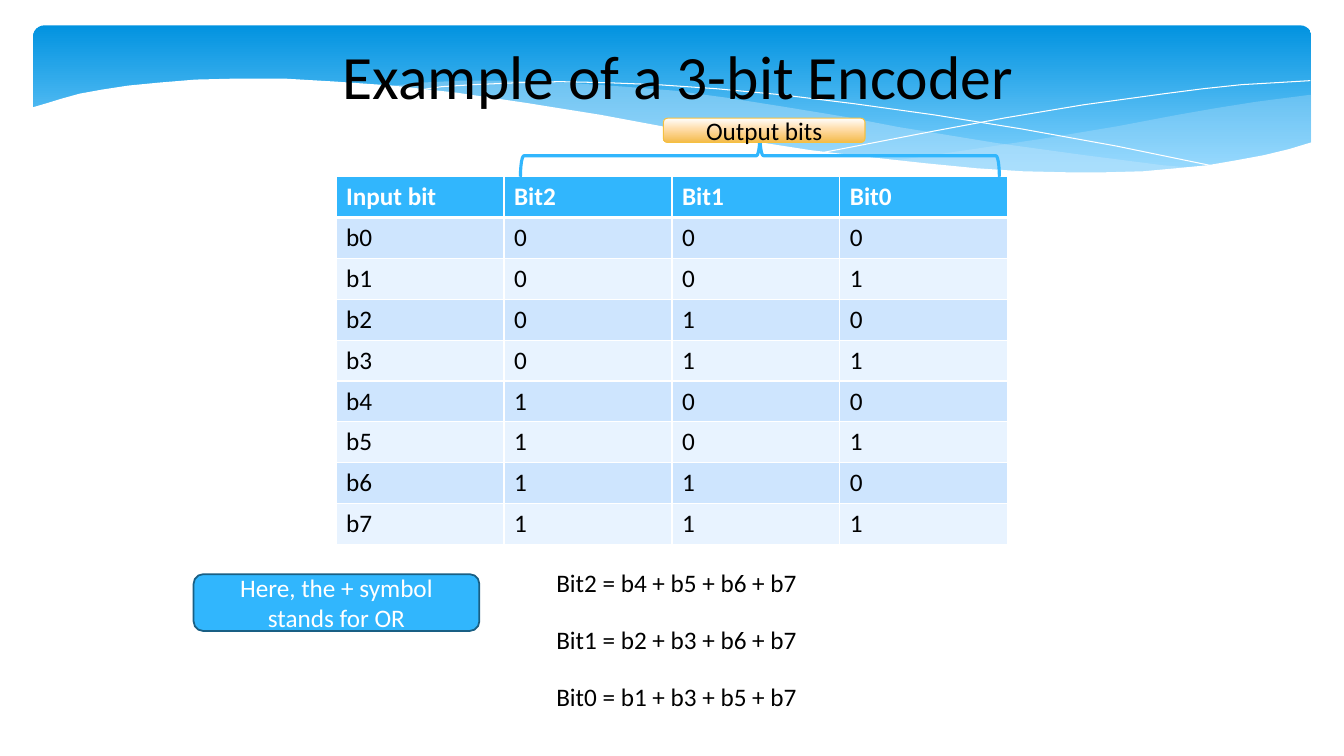
from copy import deepcopy
from lxml import etree
from pptx import Presentation
from pptx.dml.color import RGBColor
from pptx.enum.shapes import MSO_SHAPE
from pptx.enum.text import MSO_ANCHOR, MSO_AUTO_SIZE, PP_ALIGN
from pptx.oxml.ns import qn
from pptx.util import Cm, Pt

ROUNDED, BRACE = MSO_SHAPE.ROUNDED_RECTANGLE, MSO_SHAPE.LEFT_BRACE
LEFT, CENTER = PP_ALIGN.LEFT, PP_ALIGN.CENTER
MIDDLE, GROW = MSO_ANCHOR.MIDDLE, MSO_AUTO_SIZE.SHAPE_TO_FIT_TEXT

WHITE = RGBColor(0xFF, 0xFF, 0xFF)
BLACK = RGBColor(0x00, 0x00, 0x00)
SKY = RGBColor(0x31, 0xB6, 0xFD)
NAVY = RGBColor(0x19, 0x5F, 0x84)
GOLD = RGBColor(0xF5, 0xC0, 0x40)
PALE_WAVE = RGBColor(0xC6, 0xE7, 0xFC)
ROW_COLORS = [RGBColor(0xE8, 0xF3, 0xFF), RGBColor(0xCE, 0xE5, 0xFE)]
BANNER_STOPS = [(0, RGBColor(0x02, 0x93, 0xE0)), (0.9, RGBColor(0x83, 0xD3, 0xFE))]
LABEL_STOPS = [(0, WHITE), (0.44, RGBColor(0xFF, 0xDD, 0xAA)),
               (1, RGBColor(0xF4, 0xBB, 0x4A))]


def set_text(tf, text, size, color, align=LEFT, bold=False):
    tf.text = text
    p = tf.paragraphs[0]
    p.alignment = align
    r = p.runs[0]
    r.font.name = "Calibri"
    r.font.size = Pt(size)
    r.font.bold = bold
    r.font.color.rgb = color


def set_gradient(shape, stops):
    shape.fill.gradient()
    shape.fill.gradient_angle = 270
    gs_list = shape._element.spPr.find(qn("a:gradFill")).find(qn("a:gsLst"))
    while len(gs_list) < len(stops):
        gs_list.append(deepcopy(gs_list[0]))
    for stop, (position, color) in zip(shape.fill.gradient_stops, stops):
        stop.position = position
        stop.color.rgb = color


prs = Presentation()
prs.slide_width, prs.slide_height = Cm(33.87), Cm(19.05)
s = prs.slides.add_slide(prs.slide_layouts[6])

banner = s.shapes.add_shape(ROUNDED, Cm(0.84), Cm(0.64), Cm(32.21), Cm(3.96))
banner.adjustments[0] = 0.07
banner.shadow.inherit = False
banner.line.fill.background()
set_gradient(banner, BANNER_STOPS)

right_wave = [
    (1300, 94), (1246, 101), (1208, 107), (1168, 114), (1110, 125), (1038, 137),
    (972, 147), (911, 156), (882, 160), (940, 165), (993, 169), (1041, 172),
    (1099, 172), (1151, 170), (1196, 165), (1238, 158), (1266, 152), (1301, 142),
    (1301, 94)]
middle_wave = [
    (1190, 167), (1154, 164), (1076, 154), (989, 142), (891, 126), (839, 116),
    (778, 106), (721, 97), (669, 90), (619, 86), (560, 82), (506, 80), (459, 80),
    (418, 82), (382, 86), (431, 90), (483, 97), (539, 106), (599, 116), (706, 135),
    (779, 146), (846, 156), (907, 163), (963, 168), (1014, 171), (1061, 173),
    (1104, 173), (1143, 171), (1190, 167)]
long_curve = [
    (412, 90), (438, 86), (470, 84), (516, 82), (555, 81), (600, 82), (652, 84),
    (710, 88), (775, 94), (848, 103), (927, 114), (1014, 128), (1108, 145),
    (1210, 166)]
short_curve = [
    (818, 151), (870, 141), (927, 130), (997, 117), (1075, 104), (1155, 93),
    (1194, 88), (1232, 84), (1267, 82), (1300, 80)]
white_wave = [
    (1302, 141), (1279, 148), (1254, 154), (1227, 159), (1198, 164), (1167, 167),
    (1134, 170), (1097, 171), (1058, 171), (1015, 170), (969, 167), (918, 162),
    (863, 156), (804, 149), (740, 139), (671, 128), (596, 114), (521, 102),
    (453, 92), (390, 85), (333, 81), (282, 78), (235, 78), (194, 79), (158, 82),
    (127, 85), (101, 89), (79, 93), (61, 98), (48, 102), (31, 107), (31, 224),
    (1303, 224), (1303, 140)]
waves = [(right_wave, PALE_WAVE, 29), (middle_wave, PALE_WAVE, 40),
         (long_curve, None, 0), (short_curve, None, 0), (white_wave, WHITE, 100)]
for points, color, opacity in waves:
    builder = s.shapes.build_freeform(*points[0], scale=Cm(0.0254))
    builder.add_line_segments(points[1:], close=color is not None)
    wave = builder.convert_to_shape()
    wave.shadow.inherit = False
    if color is None:
        wave.fill.background()
        wave.line.color.rgb = WHITE
        wave.line.width = Pt(0)
    else:
        wave.fill.solid()
        wave.fill.fore_color.rgb = color
        wave.line.fill.background()
        rgb = wave._element.spPr.find(qn("a:solidFill"))[0]
        etree.SubElement(rgb, qn("a:alpha"), val=str(opacity * 1000))

title = s.shapes.add_textbox(Cm(4.34), Cm(0.84), Cm(25.5), Cm(2.14))
title.text_frame.word_wrap = True
title.text_frame.auto_size = GROW
set_text(title.text_frame, "Example of a 3-bit Encoder", 44, BLACK, CENTER)

rows = [["Input bit", "Bit2", "Bit1", "Bit0"]]
rows += [[f"b{n}", *f"{n:03b}"] for n in range(8)]
table = s.shapes.add_table(9, 4, Cm(8.47), Cm(4.45), Cm(16.93), Cm(9.27)).table
for i, row in enumerate(rows):
    header = i == 0
    for j, value in enumerate(row):
        cell = table.cell(i, j)
        set_text(cell.text_frame, value, 18, WHITE if header else BLACK, bold=header)
        tcPr = cell._tc.get_or_add_tcPr()
        widths = {"L": 1, "R": 1, "T": 3 if i == 1 else 1, "B": 3 if header else 1}
        for side, width in widths.items():
            ln = etree.SubElement(tcPr, qn(f"a:ln{side}"), w=str(Pt(width)))
            line_fill = etree.SubElement(ln, qn("a:solidFill"))
            etree.SubElement(line_fill, qn("a:srgbClr"), val=str(WHITE))
        cell.fill.solid()
        cell.fill.fore_color.rgb = SKY if header else ROW_COLORS[i % 2]

brace = s.shapes.add_shape(BRACE, Cm(18.62), Cm(-2.11), Cm(1.06), Cm(12.07))
brace.rotation = 90
brace.shadow.inherit = False
brace.fill.background()
brace.line.color.rgb = SKY
brace.line.width = Pt(2.25)

label = s.shapes.add_shape(ROUNDED, Cm(16.72), Cm(2.98), Cm(5.08), Cm(0.61))
set_gradient(label, LABEL_STOPS)
note = s.shapes.add_shape(ROUNDED, Cm(4.88), Cm(14.47), Cm(7.2), Cm(1.43))
note.fill.solid()
note.fill.fore_color.rgb = SKY
captions = [(label, "Output bits", BLACK, GOLD, 0.75),
            (note, "Here, the + symbol stands for OR", WHITE, NAVY, 1.25)]
for sp, text, color, line_color, width in captions:
    sp.shadow.inherit = False
    sp.line.color.rgb = line_color
    sp.line.width = Pt(width)
    sp.text_frame.word_wrap = True
    sp.text_frame.vertical_anchor = MIDDLE
    set_text(sp.text_frame, text, 18, color, CENTER)

equations = ["Bit2 = b4 + b5 + b6 + b7", "Bit1 = b2 + b3 + b6 + b7",
             "Bit0 = b1 + b3 + b5 + b7"]
for i, text in enumerate(equations):
    equation = s.shapes.add_textbox(Cm(13.77), Cm(14.17 + 1.44 * i), Cm(6.58), Cm(1.02))
    equation.text_frame.word_wrap = False
    equation.text_frame.auto_size = GROW
    set_text(equation.text_frame, text, 18, BLACK)

prs.save("out.pptx")
